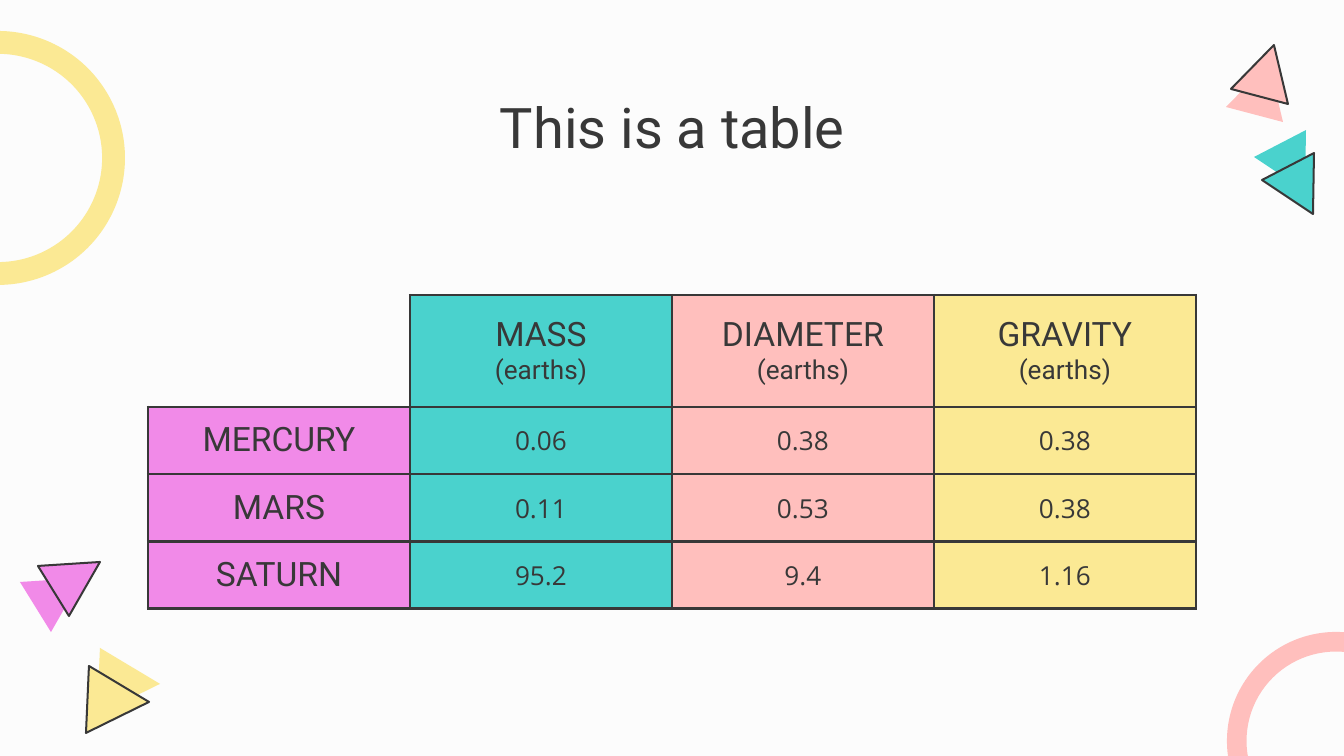
from dataclasses import dataclass

from lxml import etree
from pptx import Presentation
from pptx import util as u
from pptx.dml.color import RGBColor
from pptx.enum import shapes, text
from pptx.oxml import ns

PX = 914400 / 134.4  # EMU in one px


@dataclass(frozen=True)
class Theme:
    back: str = "FCFCFC"
    ink: str = "383838"
    teal: str = "4AD2CD"
    pink: str = "FFBFBD"
    yellow: str = "FBE994"
    purple: str = "F18AE8"
    head: str = "Roboto"
    body: str = "Open Sans"
    title: int = 30
    label: int = 18
    small: int = 14
    edge: float = 1.07
    border: float = 1.5


@dataclass(frozen=True)
class Ring:
    left: int
    top: int
    size: int
    color: str


@dataclass(frozen=True)
class Pair:
    """An outlined triangle and the offset of the plain one behind it."""
    points: tuple[tuple[int, int], ...]
    dx: int
    dy: int
    color: str


@dataclass(frozen=True)
class Column:
    name: str
    values: tuple[str, ...]
    color: str


T = Theme()
RINGS = (
    Ring(-129, 31, 254, T.yellow),
    Ring(1227, 632, 218, T.pink),
)
PAIRS = (
    Pair(((89, 666), (86, 733), (149, 702)), 11, -18, T.yellow),
    Pair(((1314, 153), (1262, 180), (1313, 214)), -8, -23, T.teal),
    Pair(((1274, 45), (1231, 89), (1288, 104)), -5, 18, T.pink),
    Pair(((69, 616), (38, 566), (100, 562)), -18, 16, T.purple),
)
PLANETS = ("MERCURY", "MARS", "SATURN")
COLUMNS = (
    Column("MASS", ("0.06", "0.11", "95.2"), T.teal),
    Column("DIAMETER", ("0.38", "0.53", "9.4"), T.pink),
    Column("GRAVITY", ("0.38", "0.38", "1.16"), T.yellow),
)
WIDTH, HEAD, ROW = 262, 112, 66


def emu(px: float) -> int:
    return round(px * PX)


def paint(fill, color: str) -> None:
    fill.solid()
    fill.fore_color.rgb = RGBColor.from_string(color)


def style(para, size: int, font: str) -> None:
    para.alignment = text.PP_ALIGN.CENTER
    for run in para.runs:
        run.font.size = u.Pt(size)
        run.font.name = font
        run.font.color.rgb = RGBColor.from_string(T.ink)


def draw_ring(slide, ring: Ring) -> None:
    size = emu(ring.size)
    shape = slide.shapes.add_shape(
        shapes.MSO_SHAPE.DONUT, emu(ring.left), emu(ring.top), size, size)
    shape.adjustments[0] = 0.09
    shape.shadow.inherit = False
    paint(shape.fill, ring.color)
    shape.line.fill.background()


def draw_pair(slide, pair: Pair) -> None:
    for dx, dy, lined in ((pair.dx, pair.dy, False), (0, 0, True)):
        first, *rest = [(x + dx, y + dy) for x, y in pair.points]
        path = slide.shapes.build_freeform(*first, scale=PX)
        path.add_line_segments(rest, close=True)
        shape = path.convert_to_shape()
        shape.shadow.inherit = False
        paint(shape.fill, pair.color)
        if lined:
            paint(shape.line.fill, T.ink)
            shape.line.width = u.Pt(T.edge)
        else:
            shape.line.fill.background()


def draw_title(slide, words: str) -> None:
    box = slide.shapes.add_textbox(emu(106), emu(79), emu(1133), emu(70))
    frame = box.text_frame
    frame.word_wrap = True
    frame.margin_left = frame.margin_right = u.Inches(0.1)
    frame.margin_top = frame.margin_bottom = u.Inches(0.1)
    frame.text = words
    style(frame.paragraphs[0], T.title, T.head)


def add_edges(cell, shown: str) -> None:
    """Draw the sides named in shown, and clear the others."""
    props = cell._tc.get_or_add_tcPr()
    for side in "LRTB":
        line = etree.SubElement(props, ns.qn(f"a:ln{side}"), w=str(u.Pt(T.border)))
        if side in shown:
            fill = etree.SubElement(line, ns.qn("a:solidFill"))
            etree.SubElement(fill, ns.qn("a:srgbClr"), val=T.ink)
        else:
            etree.SubElement(line, ns.qn("a:noFill"))


def fill_cell(cell, words: str, color: str, *looks: tuple[int, str]) -> None:
    """Fill a cell; looks holds a size and font for each paragraph."""
    add_edges(cell, "LRTB")
    paint(cell.fill, color)
    cell.vertical_anchor = text.MSO_ANCHOR.MIDDLE
    cell.margin_left = cell.margin_right = u.Inches(0.1)
    cell.margin_top = cell.margin_bottom = u.Inches(0.1)
    cell.text_frame.text = words
    for para, look in zip(cell.text_frame.paragraphs, looks):
        style(para, *look)


def draw_table(slide) -> None:
    rows, cols = len(PLANETS) + 1, len(COLUMNS) + 1
    table = slide.shapes.add_table(
        rows, cols, emu(148), emu(295),
        emu(cols * WIDTH), emu(HEAD + len(PLANETS) * ROW)).table
    table.first_row = table.horz_banding = False
    for col in table.columns:
        col.width = emu(WIDTH)
    for i, row in enumerate(table.rows):
        row.height = emu(ROW if i else HEAD)

    corner = table.cell(0, 0)
    add_edges(corner, "RB")
    corner.fill.background()
    label = (T.label, T.head)
    for r, name in enumerate(PLANETS, 1):
        fill_cell(table.cell(r, 0), name, T.purple, label)
    for c, col in enumerate(COLUMNS, 1):
        fill_cell(table.cell(0, c), f"{col.name}\n(earths)", col.color,
                  label, (T.small, T.head))
        for r, value in enumerate(col.values, 1):
            fill_cell(table.cell(r, c), value, col.color, (T.small, T.body))


def main() -> None:
    deck = Presentation()
    deck.slide_width, deck.slide_height = emu(1344), emu(756)
    slide = deck.slides.add_slide(deck.slide_layouts[6])
    paint(slide.background.fill, T.back)
    for ring in RINGS:
        draw_ring(slide, ring)
    for pair in PAIRS:
        draw_pair(slide, pair)
    draw_title(slide, "This is a table")
    draw_table(slide)
    deck.save("out.pptx")


if __name__ == "__main__":
    main()
